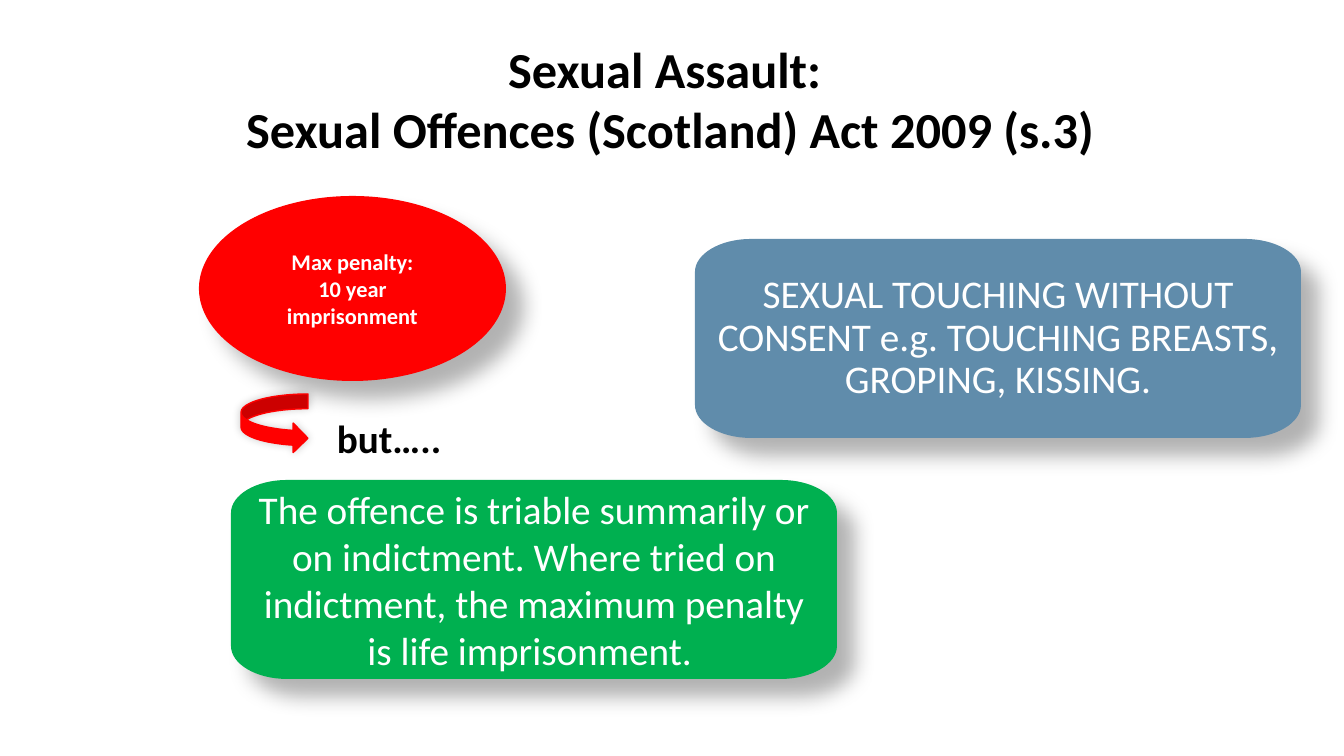
from dataclasses import dataclass

import lxml.etree
import pptx
import pptx.dml.color
import pptx.enum.shapes
import pptx.enum.text
import pptx.oxml.ns
import pptx.util

EMU_PER_PX = 914400 / 100.8
CORNER_W, CORNER_H = 56, 33
ARC = 0.55
SHAPES = pptx.enum.shapes.MSO_SHAPE
CENTER = pptx.enum.text.PP_ALIGN.CENTER
LEFT = pptx.enum.text.PP_ALIGN.LEFT
TOP = pptx.enum.text.MSO_ANCHOR.TOP
MIDDLE = pptx.enum.text.MSO_ANCHOR.MIDDLE

Point = tuple[float, float]


@dataclass(frozen=True)
class Frame:
    x: int
    y: int
    w: int
    h: int


@dataclass(frozen=True)
class Text:
    lines: tuple[str, ...]
    size: int
    color: str
    bold: bool = False
    align: int = CENTER
    anchor: int = TOP
    spacing: float = 1.0
    inset: int | None = None


@dataclass(frozen=True)
class Shadow:
    alpha: int
    blur: int
    distance: int
    angle: int


@dataclass(frozen=True)
class Label:
    frame: Frame
    text: Text


@dataclass(frozen=True)
class Panel:
    frame: Frame
    fill: str
    text: Text


@dataclass(frozen=True)
class Corner:
    enter: Point
    vertex: Point
    leave: Point


DROP = Shadow(alpha=30, blur=15, distance=18, angle=45)
GLOW = Shadow(alpha=20, blur=6, distance=0, angle=225)

TITLE = Label(
    Frame(49, 33, 1243, 132),
    Text(("Sexual Assault: ", "Sexual Offences (Scotland) Act 2009 (s.3)"),
         36, "000000", bold=True))
BUT = Label(
    Frame(327, 409, 190, 57),
    Text(("but…..",), 28, "000000", bold=True, align=LEFT))
PENALTY = Panel(
    Frame(199, 196, 307, 185), "FF0000",
    Text(("Max penalty:", "10 year imprisonment"), 16, "FFFFFF",
         bold=True, anchor=MIDDLE))
PANELS = [
    Panel(Frame(695, 239, 606, 199), "608CAB",
          Text(("SEXUAL TOUCHING WITHOUT CONSENT e.g. TOUCHING BREASTS, "
                "GROPING, KISSING.",),
               28, "FFFFFF", anchor=MIDDLE, spacing=0.9, inset=17)),
    Panel(Frame(231, 480, 606, 199), "00B050",
          Text(("The offence is triable summarily or on indictment. Where tried "
                "on indictment, the maximum penalty is life imprisonment. ",),
               28, "FFFFFF", anchor=MIDDLE, inset=17)),
]
ARROW = Frame(241, 394, 67, 59)


def px(n: float) -> pptx.util.Emu:
    return pptx.util.Emu(round(n * EMU_PER_PX))


def rgb(color: str) -> pptx.dml.color.RGBColor:
    return pptx.dml.color.RGBColor.from_string(color)


def place(f: Frame) -> tuple[int, ...]:
    return px(f.x), px(f.y), px(f.w), px(f.h)


def write(s, text: Text) -> None:
    tf = s.text_frame
    tf.word_wrap = True
    tf.vertical_anchor = text.anchor
    if text.inset is not None:
        tf.margin_left = tf.margin_right = px(text.inset)
        tf.margin_top = tf.margin_bottom = px(text.inset)
    for i, line in enumerate(text.lines):
        p = tf.add_paragraph() if i else tf.paragraphs[0]
        p.text = line
        p.alignment = text.align
        p.line_spacing = text.spacing
        p.font.name = "Calibri"
        p.font.size = pptx.util.Pt(text.size)
        p.font.bold = text.bold
        p.font.color.rgb = rgb(text.color)


def paint(s, fill: str, shadow: Shadow) -> None:
    s.fill.solid()
    s.fill.fore_color.rgb = rgb(fill)
    s.line.fill.background()
    s.shadow.inherit = False
    qn = pptx.oxml.ns.qn
    effects = s._element.spPr.find(qn("a:effectLst"))
    outer = lxml.etree.SubElement(
        effects, qn("a:outerShdw"),
        blurRad=str(pptx.util.Pt(shadow.blur)),
        dist=str(pptx.util.Pt(shadow.distance)),
        dir=str(shadow.angle * 60000), algn="tl", rotWithShape="0")
    color = lxml.etree.SubElement(outer, qn("a:srgbClr"), val="000000")
    lxml.etree.SubElement(color, qn("a:alpha"), val=str(shadow.alpha * 1000))


def rounded_corners(w: int, h: int) -> list[Corner]:
    cw, ch = CORNER_W, CORNER_H
    return [
        Corner((0, ch), (0, 0), (cw, 0)),
        Corner((w - cw, 0), (w, 0), (w, ch)),
        Corner((w, h - ch), (w, h), (w - cw, h)),
        Corner((cw, h), (0, h), (0, h - ch)),
    ]


def toward(start: Point, end: Point) -> Point:
    return tuple(a + ARC * (b - a) for a, b in zip(start, end))


def bend(line, corner: Corner) -> None:
    qn = pptx.oxml.ns.qn
    curve = lxml.etree.Element(qn("a:cubicBezTo"))
    for x, y in (toward(corner.enter, corner.vertex),
                 toward(corner.leave, corner.vertex), corner.leave):
        lxml.etree.SubElement(curve, qn("a:pt"), x=str(px(x)), y=str(px(y)))
    line.getparent().replace(line, curve)


def add_panel(shapes, panel: Panel) -> None:
    f = panel.frame
    corners = rounded_corners(f.w, f.h)
    start, *rest = [(px(x), px(y)) for c in corners for x, y in (c.enter, c.leave)]
    builder = shapes.build_freeform(*start)
    builder.add_line_segments(rest, close=True)
    s = builder.convert_to_shape(px(f.x), px(f.y))
    lines = list(s._element.spPr.iter(pptx.oxml.ns.qn("a:lnTo")))
    for line, corner in zip(lines[::2], corners):
        bend(line, corner)
    paint(s, panel.fill, DROP)
    write(s, panel.text)


def add_label(shapes, label: Label) -> None:
    write(shapes.add_textbox(*place(label.frame)), label.text)


def main() -> None:
    prs = pptx.Presentation()
    prs.slide_width, prs.slide_height = px(1344), px(756)
    shapes = prs.slides.add_slide(prs.slide_layouts[6]).shapes

    add_label(shapes, TITLE)

    s = shapes.add_shape(SHAPES.OVAL, *place(PENALTY.frame))
    paint(s, PENALTY.fill, DROP)
    write(s, PENALTY.text)

    for panel in PANELS:
        add_panel(shapes, panel)

    add_label(shapes, BUT)

    s = shapes.add_shape(SHAPES.CURVED_RIGHT_ARROW, *place(ARROW))
    paint(s, "FF0000", GLOW)
    s.line.color.rgb = rgb("FF0000")
    s.line.width = pptx.util.Pt(1)

    prs.save("out.pptx")


if __name__ == "__main__":
    main()
